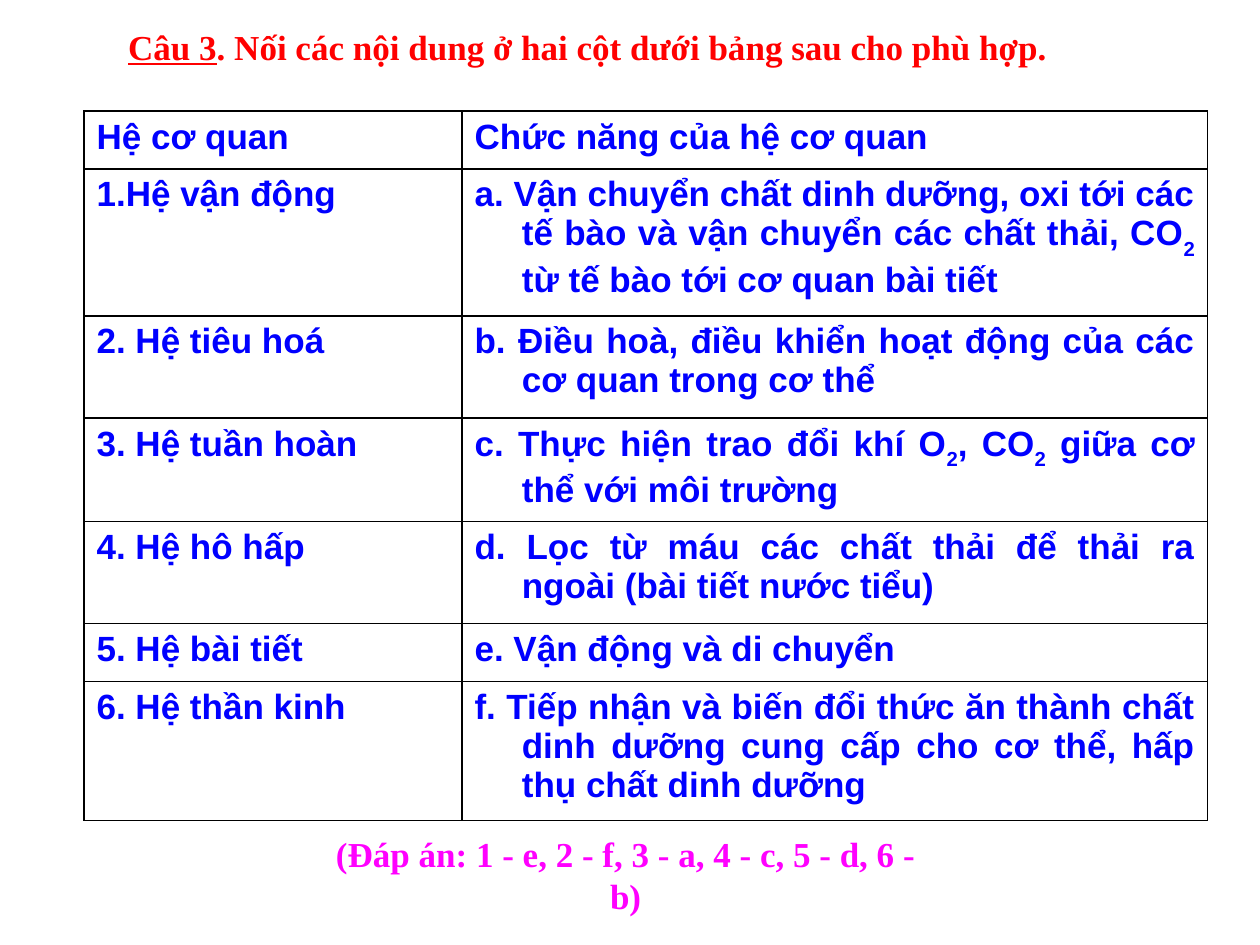
import dataclasses

import lxml.etree
import pptx
import pptx.dml.color
import pptx.enum.text
import pptx.oxml.ns
import pptx.util

Pt = pptx.util.Pt
Align = pptx.enum.text.PP_ALIGN
Anchor = pptx.enum.text.MSO_ANCHOR


@dataclasses.dataclass(frozen=True)
class Theme:
    serif: str = "Times New Roman"
    sans: str = "Arial"
    size: int = 20
    title: str = "FF0000"
    table: str = "0000FF"
    answer: str = "FF00FF"
    border: str = "000000"
    border_width: int = 1
    hanging: int = 27


class SlideBuilder:
    def __init__(self, deck, theme):
        self.theme = theme
        self.slide = deck.slides.add_slide(deck.slide_layouts[5])

    def add_run(self, para, text, face, color, underline=False, subscript=False):
        span = para.add_run()
        span.text = text
        font = span.font
        font.name, font.size = face, Pt(self.theme.size)
        font.bold, font.underline = True, underline
        font.color.rgb = pptx.dml.color.RGBColor.from_string(color)
        if subscript:
            span._r.get_or_add_rPr().set("baseline", "-30000")

    def format_frame(self, frame, align):
        frame.word_wrap = True
        frame.auto_size = pptx.enum.text.MSO_AUTO_SIZE.NONE
        frame.vertical_anchor = Anchor.MIDDLE
        para = frame.paragraphs[0]
        para.alignment = align
        return para

    def title(self, label, text, left, top, width, height):
        box = self.slide.shapes.title
        box.left, box.top, box.width, box.height = map(Pt, (left, top, width, height))
        para = self.format_frame(box.text_frame, Align.LEFT)
        self.add_run(para, label, self.theme.serif, self.theme.title, underline=True)
        self.add_run(para, text, self.theme.serif, self.theme.title)

    def text(self, text, left, top, width, height):
        box = self.slide.shapes.add_textbox(*map(Pt, (left, top, width, height)))
        para = self.format_frame(box.text_frame, Align.CENTER)
        self.add_run(para, text, self.theme.serif, self.theme.answer)

    def table(self, rows, left, top, widths, heights):
        frame = self.slide.shapes.add_table(
            len(rows), len(widths), Pt(left), Pt(top), Pt(sum(widths)), Pt(sum(heights)))
        table = frame.table
        table.first_row = table.horz_banding = False
        for column, width in zip(table.columns, widths):
            column.width = Pt(width)
        for row, height, texts in zip(table.rows, heights, rows):
            row.height = Pt(height)
            for cell, text in zip(row.cells, texts):
                self.fill_cell(cell, text)

    def fill_cell(self, cell, text):
        """Text between bars is set as subscript."""
        para = cell.text_frame.paragraphs[0]
        para.alignment = Align.JUSTIFY
        indent = Pt(self.theme.hanging)
        properties = para._p.get_or_add_pPr()
        properties.set("marL", str(indent))
        properties.set("indent", str(-indent))
        for index, part in enumerate(text.split("|")):
            self.add_run(para, part, self.theme.sans, self.theme.table,
                         subscript=index % 2 == 1)
        self.draw_borders(cell)
        cell.fill.background()

    def draw_borders(self, cell):
        qn = pptx.oxml.ns.qn
        properties = cell._tc.get_or_add_tcPr()
        for side in ("a:lnL", "a:lnR", "a:lnT", "a:lnB"):
            line = lxml.etree.SubElement(
                properties, qn(side), w=str(Pt(self.theme.border_width)))
            fill = lxml.etree.SubElement(line, qn("a:solidFill"))
            lxml.etree.SubElement(fill, qn("a:srgbClr"), val=self.theme.border)


ORGAN_SYSTEMS = [
    ("Hệ cơ quan", "Chức năng của hệ cơ quan"),
    ("1.Hệ vận động",
     "a. Vận chuyển chất dinh dưỡng, oxi tới các tế bào và vận chuyển các chất thải, "
     "CO|2| từ tế bào tới cơ quan bài tiết"),
    ("2. Hệ tiêu hoá",
     "b. Điều hoà, điều khiển hoạt động của các cơ quan trong cơ thể"),
    ("3. Hệ tuần hoàn",
     "c. Thực hiện trao đổi khí O|2|, CO|2| giữa cơ thể với môi trường"),
    ("4. Hệ hô hấp",
     "d. Lọc từ máu các chất thải để thải ra ngoài (bài tiết nước tiểu)"),
    ("5. Hệ bài tiết", "e. Vận động và di chuyển"),
    ("6. Hệ thần kinh",
     "f. Tiếp nhận và biến đổi thức ăn thành chất dinh dưỡng cung cấp cho cơ thể, "
     "hấp thụ chất dinh dưỡng"),
]


def main():
    deck = pptx.Presentation()
    deck.slide_width, deck.slide_height = Pt(720), Pt(540)
    page = SlideBuilder(deck, Theme())

    # Question
    page.title("Câu 3", ". Nối các nội dung ở hai cột dưới bảng sau cho phù hợp.",
               66, 11, 582, 31)

    # Organ systems and their functions
    page.table(ORGAN_SYSTEMS, 48, 63.5, widths=(216, 426),
               heights=(33, 84, 58.5, 59, 58.5, 33, 79.5))

    # Answer
    page.text("(Đáp án: 1 - e, 2 - f, 3 - a, 4 - c, 5 - d, 6 - b)",
              174, 484.5, 367, 31)

    deck.save("out.pptx")


if __name__ == "__main__":
    main()
